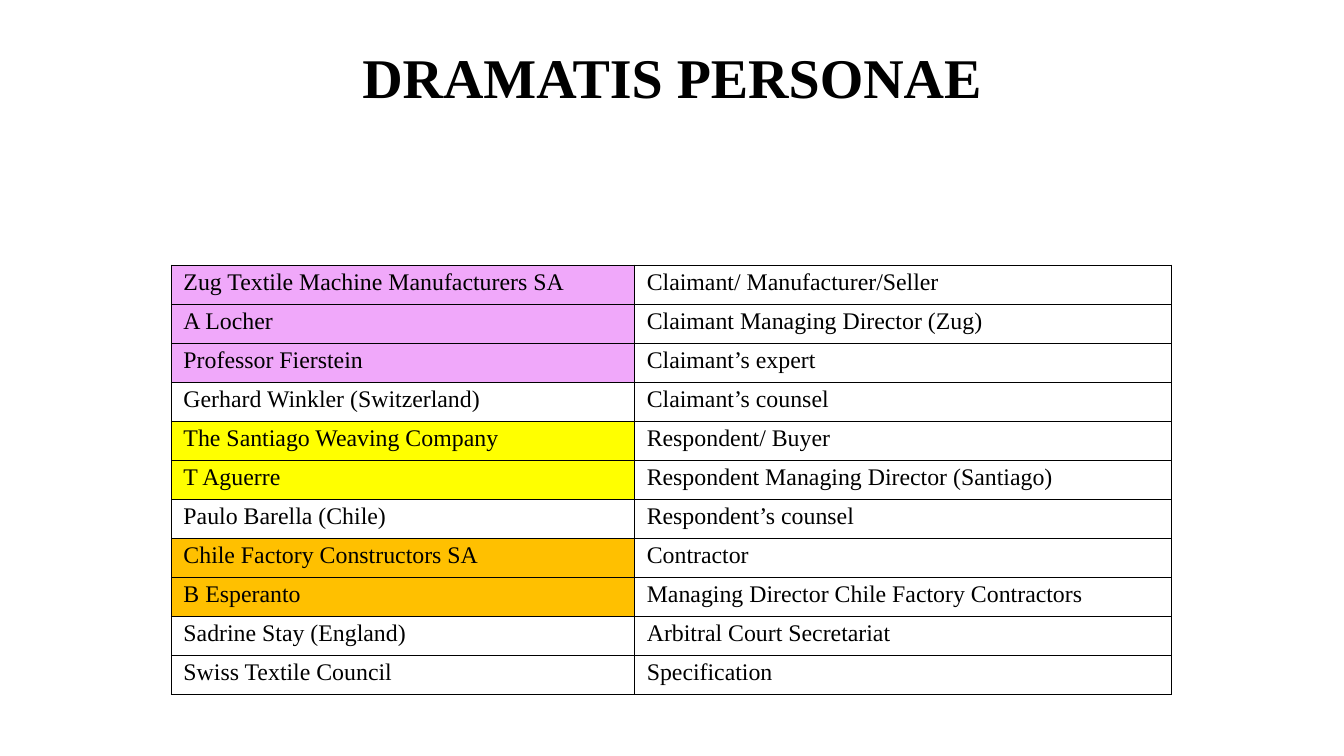
from lxml import etree
from pptx import Presentation
from pptx.dml.color import RGBColor
from pptx.enum.text import MSO_ANCHOR, PP_ALIGN
from pptx.oxml.ns import qn
from pptx.util import Inches, Pt

CENTER, LEFT = PP_ALIGN.CENTER, PP_ALIGN.LEFT
MIDDLE, TOP = MSO_ANCHOR.MIDDLE, MSO_ANCHOR.TOP
FONT = "Times New Roman"
BLACK = "000000"
CLAIMANT, RESPONDENT, CONTRACTOR = "F0A8FA", "FFFF00", "FFC000"
COLUMN_WIDTHS = (4.6, 5.33)

PERSONAE = [
    ("Zug Textile Machine Manufacturers SA", "Claimant/ Manufacturer/Seller", CLAIMANT),
    ("A Locher", "Claimant Managing Director (Zug)", CLAIMANT),
    ("Professor Fierstein", "Claimant’s expert", CLAIMANT),
    ("Gerhard Winkler (Switzerland)", "Claimant’s counsel", None),
    ("The Santiago Weaving Company", "Respondent/ Buyer", RESPONDENT),
    ("T Aguerre", "Respondent Managing Director (Santiago)", RESPONDENT),
    ("Paulo Barella (Chile)", "Respondent’s counsel", None),
    ("Chile Factory Constructors SA", "Contractor", CONTRACTOR),
    ("B Esperanto", "Managing Director Chile Factory Contractors", CONTRACTOR),
    ("Sadrine Stay (England)", "Arbitral Court Secretariat", None),
    ("Swiss Textile Council", "Specification", None),
]


def rgb(color):
    return RGBColor.from_string(color)


def write(frame, text, size, bold=False, align=LEFT, spacing=1.0, after=0):
    paragraph = frame.paragraphs[0]
    paragraph.alignment = align
    paragraph.line_spacing = spacing
    paragraph.space_after = Pt(after)
    run = paragraph.add_run()
    run.text = text
    run.font.name = FONT
    run.font.size = Pt(size)
    run.font.bold = bold
    run.font.color.rgb = rgb(BLACK)


def outline(cell, color, width):
    properties = cell._tc.get_or_add_tcPr()
    for side in ("a:lnL", "a:lnR", "a:lnT", "a:lnB"):
        line = etree.SubElement(properties, qn(side), w=str(Pt(width)))
        fill = etree.SubElement(line, qn("a:solidFill"))
        etree.SubElement(fill, qn("a:srgbClr"), val=color)


def add_heading(slide, left, top, width, height):
    heading = slide.shapes.add_textbox(
        Inches(left), Inches(top), Inches(width), Inches(height))
    frame = heading.text_frame
    frame.word_wrap = True
    frame.vertical_anchor = MIDDLE
    write(frame, "DRAMATIS PERSONAE", 40, bold=True, align=CENTER, spacing=0.9)


def fill_cell(cell, text, color):
    cell.margin_left = cell.margin_right = Inches(0.12)
    cell.margin_top = Inches(0.02)
    cell.margin_bottom = 0
    cell.vertical_anchor = TOP
    write(cell.text_frame, text, 17, spacing=1.07, after=8)
    outline(cell, BLACK, 1)
    if color:
        cell.fill.solid()
        cell.fill.fore_color.rgb = rgb(color)
    else:
        cell.fill.background()


def add_cast(slide, left, top, width, height):
    cast = slide.shapes.add_table(
        len(PERSONAE), len(COLUMN_WIDTHS),
        Inches(left), Inches(top), Inches(width), Inches(height)).table
    cast.first_row = False
    cast.horz_banding = False
    for column, share in zip(cast.columns, COLUMN_WIDTHS):
        column.width = Inches(width * share / sum(COLUMN_WIDTHS))
    for row, (person, role, color) in zip(cast.rows, PERSONAE):
        row.height = Inches(height / len(PERSONAE))
        fill_cell(row.cells[0], person, color)
        fill_cell(row.cells[1], role, None)


def main():
    deck = Presentation()
    deck.slide_width, deck.slide_height = Inches(13.33), Inches(7.5)
    slide = deck.slides.add_slide(deck.slide_layouts[6])
    add_heading(slide, 1.1, 0.19, 11.13, 1.22)
    add_cast(slide, 1.7, 2.63, 9.92, 4.26)
    deck.save("out.pptx")


if __name__ == "__main__":
    main()
